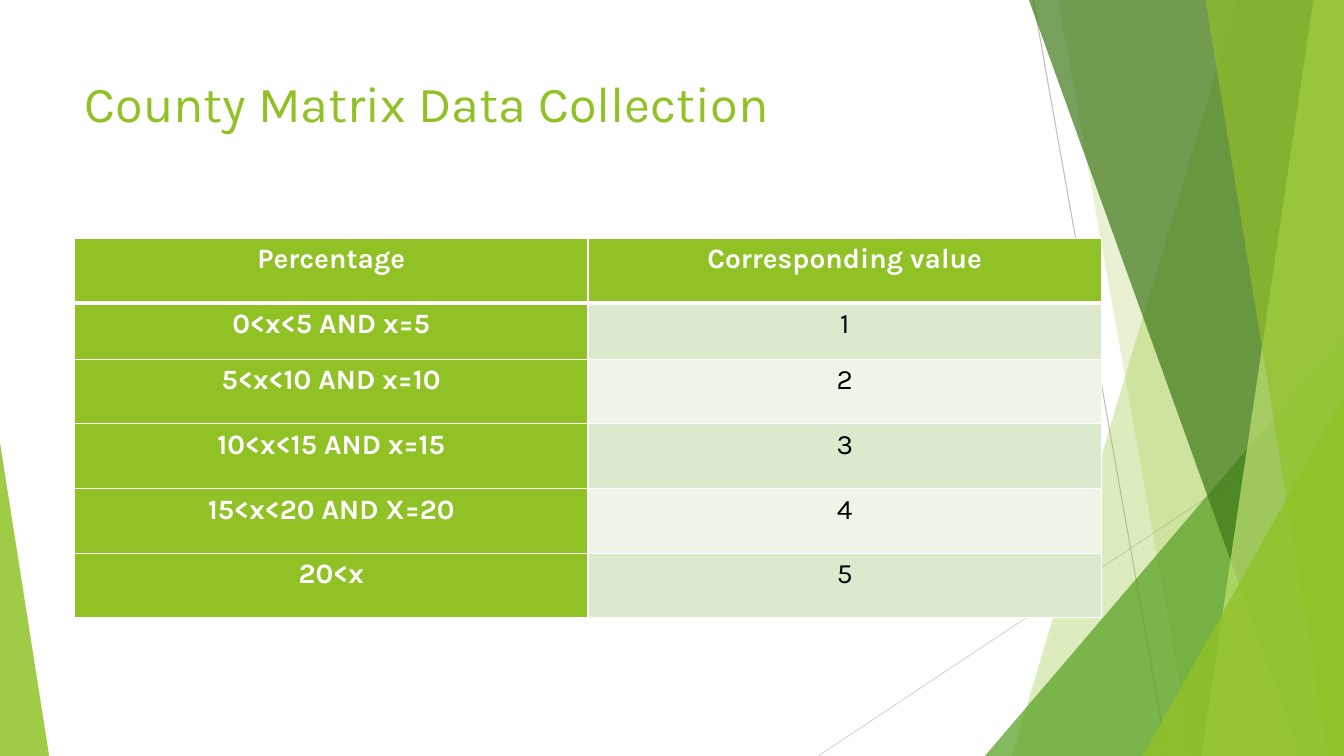
from dataclasses import dataclass

from lxml import etree
from pptx import Presentation
from pptx.dml.color import RGBColor
from pptx.enum.shapes import MSO_CONNECTOR, MSO_SHAPE
from pptx.enum.text import MSO_ANCHOR, PP_ALIGN
from pptx.oxml.ns import qn
from pptx.util import Cm, Pt

STRAIGHT = MSO_CONNECTOR.STRAIGHT
TRIANGLE = MSO_SHAPE.ISOSCELES_TRIANGLE
TOP = MSO_ANCHOR.TOP
LEFT, CENTER = PP_ALIGN.LEFT, PP_ALIGN.CENTER

WHITE = RGBColor(0xFF, 0xFF, 0xFF)
BLACK = RGBColor(0x00, 0x00, 0x00)
LIME = RGBColor(0x90, 0xC2, 0x26)
PALE_LIME = RGBColor(0xC0, 0xE4, 0x74)
GREEN = RGBColor(0x54, 0xA0, 0x21)
DARK_GREEN = RGBColor(0x3F, 0x78, 0x19)
GRAY = RGBColor(0xBF, 0xBF, 0xBF)
LIGHT_GRAY = RGBColor(0xD9, 0xD9, 0xD9)
BANDS = (RGBColor(0xDB, 0xE9, 0xCD), RGBColor(0xEE, 0xF4, 0xE8))

FONT = "Karla"
HEADINGS = ("Percentage", "Corresponding value")
RANGES = ("0<x<5 AND x=5", "5<x<10 AND x=10", "10<x<15 AND x=15",
          "15<x<20 AND X=20", "20<x")
ROW_HEIGHTS = (1.63, 1.42, 1.63, 1.63, 1.63, 1.63)


@dataclass
class Box:
    """A region of the slide, in centimetres."""
    left: float
    top: float
    width: float
    height: float

    @property
    def right(self):
        """Return the right edge."""
        return self.left + self.width

    @property
    def bottom(self):
        """Return the bottom edge."""
        return self.top + self.height


def write_text(text_frame, text, size, color, bold=False, align=LEFT, spacing=1.0):
    """Write one formatted paragraph into a text frame."""
    paragraph = text_frame.paragraphs[0]
    paragraph.alignment = align
    paragraph.line_spacing = spacing
    run = paragraph.add_run()
    run.text = text
    run.font.name = FONT
    run.font.size = Pt(size)
    run.font.bold = bold
    run.font.color.rgb = color


def paint(shape, color, opacity):
    """Give a shape a translucent fill with no line or shadow."""
    shape.shadow.inherit = False
    shape.line.fill.background()
    shape.fill.solid()
    shape.fill.fore_color.rgb = color
    color_element = shape.fill._xPr.find(qn("a:solidFill"))[0]
    etree.SubElement(color_element, qn("a:alpha"), val=str(opacity * 1000))


def add_line(slide, start, end, color):
    """Draw a thin straight line between two points."""
    line = slide.shapes.add_connector(STRAIGHT, *map(Cm, start + end))
    line.line.color.rgb = color
    line.line.width = Pt(0.75)
    etree.SubElement(line._element.spPr, qn("a:effectLst"))


def add_facet(slide, box, top_inset, bottom_inset, color, opacity):
    """Fill the box from a slanted left side to its right edge."""
    corners = [(box.right - top_inset, box.top), (box.right, box.top),
               (box.right, box.bottom), (box.right - bottom_inset, box.bottom)]
    points = [(Cm(x), Cm(y)) for x, y in corners]
    builder = slide.shapes.build_freeform(*points[0])
    builder.add_line_segments(points[1:], close=True)
    paint(builder.convert_to_shape(), color, opacity)


def add_corner(slide, box, apex, color, opacity):
    """Fill the box with a triangle whose apex is at a share of its width."""
    shape = slide.shapes.add_shape(
        TRIANGLE, Cm(box.left), Cm(box.top), Cm(box.width), Cm(box.height))
    shape.adjustments[0] = apex
    paint(shape, color, opacity)


def add_right_fan(slide, box):
    """Layer the lines and green facets along the right side."""
    def right_corner(width, height):
        return Box(box.right - width, box.bottom - height, width, height)

    add_line(slide, (box.right - 7.83, box.top), (box.right - 4.45, box.bottom), GRAY)
    add_line(slide, (box.right, box.bottom - 8.81), (box.left, box.bottom), LIGHT_GRAY)
    add_facet(slide, box, 2.68, 8.37, LIME, 30)
    add_facet(slide, box, 7.2, 3.82, LIME, 20)
    add_corner(slide, right_corner(9.05, 10.59), 1, GREEN, 72)
    add_facet(slide, box, 7.94, 1.08, DARK_GREEN, 70)
    add_facet(slide, box, 0.77, 3.59, PALE_LIME, 70)
    add_facet(slide, box, 3.49, 0.39, LIME, 65)
    add_corner(slide, right_corner(5.07, 9.07), 1, LIME, 80)


def place_title(slide, box, text):
    """Move and format the title placeholder."""
    title = slide.shapes.title
    title.left, title.top = Cm(box.left), Cm(box.top)
    title.width, title.height = Cm(box.width), Cm(box.height)
    title.text_frame.word_wrap = True
    title.text_frame.vertical_anchor = TOP
    write_text(title.text_frame, text, 36, LIME)


def add_borders(cell, widths):
    """Draw white borders, given as points by side."""
    properties = cell._tc.get_or_add_tcPr()
    for side, width in widths.items():
        line = etree.SubElement(properties, qn(f"a:ln{side}"), w=str(Pt(width)))
        fill = etree.SubElement(line, qn("a:solidFill"))
        etree.SubElement(fill, qn("a:srgbClr"), val=str(WHITE))


def format_cell(cell, text, fill, color, bold, top_border, bottom_border):
    """Fill, border and write one table cell."""
    cell.margin_left = cell.margin_right = Cm(0.18)
    cell.margin_top = cell.margin_bottom = 0
    cell.vertical_anchor = TOP
    add_borders(cell, {"L": 1, "R": 1, "T": top_border, "B": bottom_border})
    cell.fill.solid()
    cell.fill.fore_color.rgb = fill
    write_text(cell.text_frame, text, 20, color, bold=bold, align=CENTER, spacing=1.15)


def add_value_table(slide, box):
    """Build the table that maps percentage ranges to values."""
    rows = [HEADINGS] + [(text, str(value)) for value, text in enumerate(RANGES, 1)]
    table = slide.shapes.add_table(
        len(rows), len(HEADINGS), Cm(box.left), Cm(box.top),
        Cm(box.width), Cm(box.height)).table
    table.first_col = True
    for row_index, row in enumerate(rows):
        table.rows[row_index].height = Cm(ROW_HEIGHTS[row_index])
        for column_index, text in enumerate(row):
            heading = row_index == 0 or column_index == 0
            format_cell(
                table.cell(row_index, column_index), text,
                fill=LIME if heading else BANDS[(row_index - 1) % 2],
                color=WHITE if heading else BLACK, bold=heading,
                top_border=3 if row_index == 1 else 1,
                bottom_border=3 if row_index == 0 else 1)


def main():
    """Build and save the slide."""
    presentation = Presentation()
    presentation.slide_width, presentation.slide_height = Cm(33.87), Cm(19.05)
    slide = presentation.slides.add_slide(presentation.slide_layouts[5])
    add_right_fan(slide, Box(20.62, 0, 13.25, 19.05))
    add_corner(slide, Box(0, 11.15, 1.24, 7.9), 0, LIME, 85)
    place_title(slide, Box(1.88, 1.7, 23.88, 3.66), "County Matrix Data Collection")
    add_value_table(slide, Box(1.88, 6, 25.88, sum(ROW_HEIGHTS)))
    presentation.save("out.pptx")


if __name__ == "__main__":
    main()
